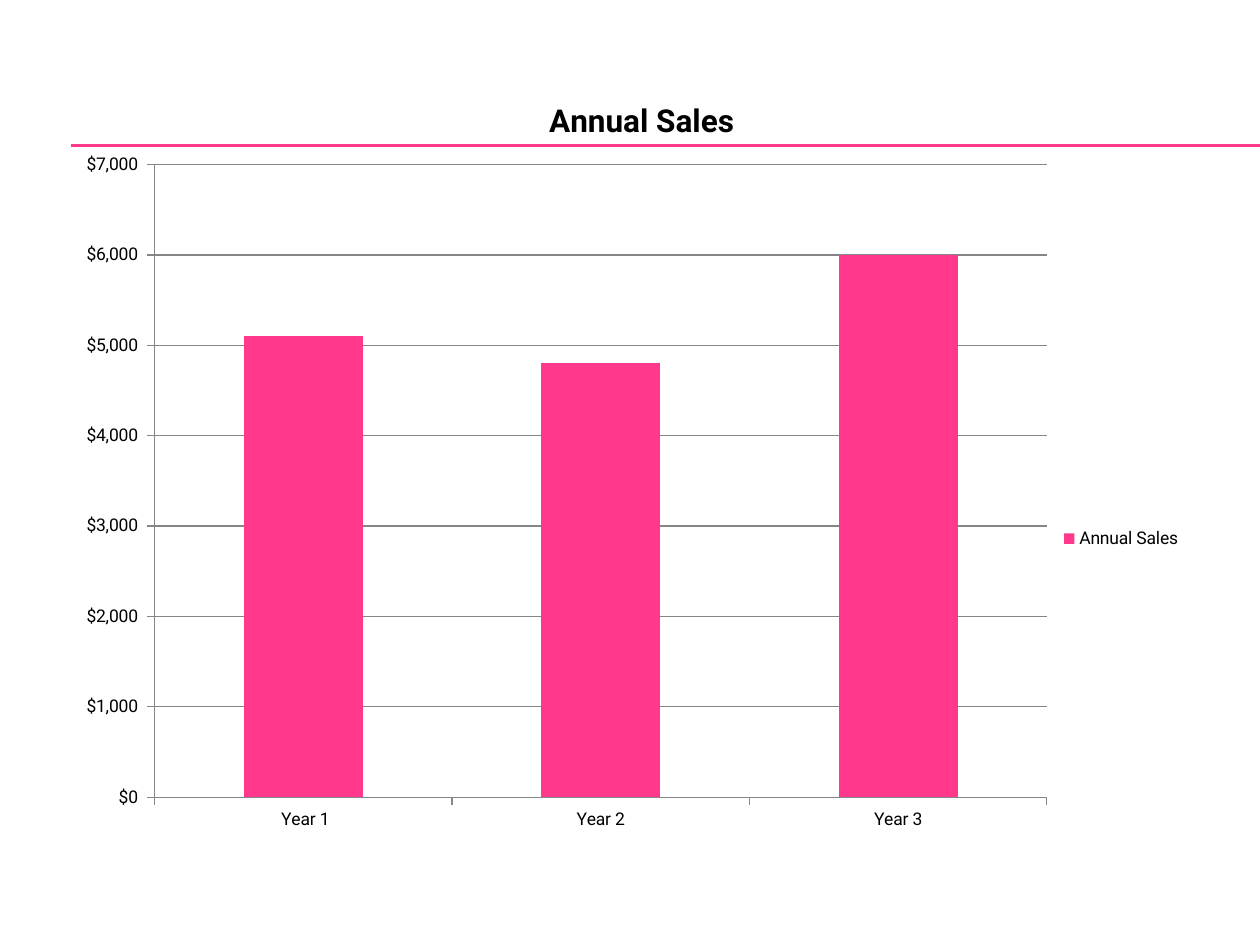
from lxml import etree
from pptx import Presentation
from pptx.chart.data import CategoryChartData
from pptx.dml.color import RGBColor
from pptx.enum.chart import XL_CHART_TYPE, XL_LEGEND_POSITION, XL_TICK_MARK
from pptx.enum.shapes import MSO_CONNECTOR
from pptx.oxml import parse_xml
from pptx.oxml.ns import nsdecls, qn
from pptx.util import Inches, Pt

COLUMN = XL_CHART_TYPE.COLUMN_CLUSTERED
RIGHT = XL_LEGEND_POSITION.RIGHT
OUT = XL_TICK_MARK.OUTSIDE
STRAIGHT = MSO_CONNECTOR.STRAIGHT

WIDE, HIGH = 10, 7.5
FONT = "Roboto"
PINK = RGBColor(0xFF, 0x38, 0x8C)
BLACK = RGBColor(0, 0, 0)
GRAY = RGBColor(0x86, 0x86, 0x86)
MONEY = '"$"#,##0_);[Red]\\("$"#,##0\\)'
NAME = "Annual Sales"
SALES = {" Year 1": 5100, "Year 2": 4800, "Year 3": 6000}


def style(font, size=10, bold=False, color=BLACK):
    font.name, font.size, font.bold = FONT, Pt(size), bold
    font.color.rgb = color


def write(frame, text, **form):
    frame.text = text
    style(frame.paragraphs[0].runs[0].font, **form)


def stroke(line, color):
    line.color.rgb = color
    line.width = Pt(0.75)


def rule(slide, left, top):
    """Draw a level line that runs to the right edge."""
    line = slide.shapes.add_connector(
        STRAIGHT, Inches(left), Inches(top), Inches(WIDE), Inches(top))
    stroke(line.line, PINK)
    etree.SubElement(line._element.spPr, qn("a:effectLst"))


def place(part, index, inner=False, **shares):
    """Fix a chart part at shares of the chart's size."""
    for old in part.findall(qn("c:layout")):
        part.remove(old)
    target = '<c:layoutTarget val="inner"/>' if inner else ""
    modes = "".join(f'<c:{key}Mode val="edge"/>' for key in "xy")
    sizes = "".join(f'<c:{key} val="{val}"/>' for key, val in shares.items())
    part.insert(index, parse_xml(
        f'<c:layout {nsdecls("c")}><c:manualLayout>{target}{modes}{sizes}'
        '</c:manualLayout></c:layout>'))


def format_axes(chart):
    for axis in (chart.category_axis, chart.value_axis):
        axis.major_tick_mark = OUT
        stroke(axis.format.line, GRAY)
        style(axis.tick_labels.font)
    scale = chart.value_axis
    scale.minimum_scale, scale.maximum_scale = 0, 7000
    scale.major_unit = 1000
    scale.has_major_gridlines = True
    stroke(scale.major_gridlines.format.line, GRAY)
    scale.tick_labels.number_format = MONEY
    scale.tick_labels.number_format_is_linked = False


def add_sales(slide):
    data = CategoryChartData(number_format=MONEY)
    data.categories = list(SALES)
    data.add_series(NAME, list(SALES.values()))
    chart = slide.shapes.add_chart(
        COLUMN, Inches(0.5), Inches(0.5), Inches(9.08), Inches(6.2), data).chart
    style(chart.font)
    format_axes(chart)

    # Columns
    plot = chart.plots[0]
    plot.gap_width = 150
    plot.vary_by_categories = False
    fill = plot.series[0].format.fill
    fill.solid()
    fill.fore_color.rgb = PINK
    area = chart._chartSpace.find(".//" + qn("c:plotArea"))
    place(area, 0, inner=True, x=0.08, y=0.13, w=0.78, h=0.81)

    # Title
    chart.has_title = True
    title = chart.chart_title
    write(title.text_frame, NAME, size=18, bold=True)
    place(title._element, 1, x=0.42, y=0.04)

    # Legend
    chart.has_legend = True
    legend = chart.legend
    legend.position = RIGHT
    legend.include_in_layout = False
    style(legend.font)
    place(legend._element, 1, x=0.87, y=0.59)


def main():
    deck = Presentation()
    deck.slide_width, deck.slide_height = Inches(WIDE), Inches(HIGH)
    slide = deck.slides.add_slide(deck.slide_layouts[6])
    # Double rule under the chart title
    for top in (1.15, 1.16):
        rule(slide, 0.56, top)
    add_sales(slide)
    deck.save("out.pptx")


if __name__ == "__main__":
    main()
